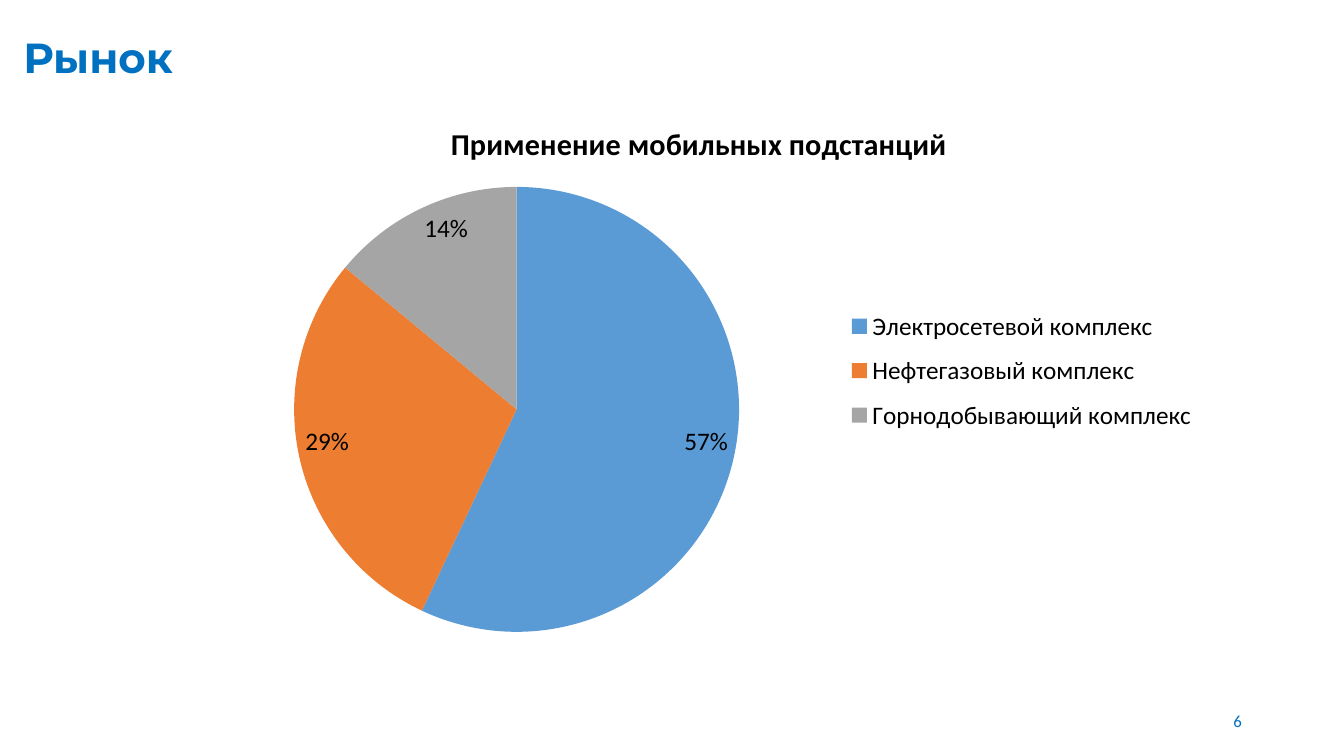
from lxml import etree
from pptx import Presentation
from pptx.chart.data import CategoryChartData
from pptx.dml.color import RGBColor
from pptx.enum.chart import XL_CHART_TYPE, XL_LABEL_POSITION, XL_LEGEND_POSITION
from pptx.enum.text import MSO_ANCHOR, PP_ALIGN
from pptx.oxml.ns import qn
from pptx.util import Pt

PIE = XL_CHART_TYPE.PIE
INSIDE_END = XL_LABEL_POSITION.INSIDE_END
LEGEND_RIGHT = XL_LEGEND_POSITION.RIGHT
MIDDLE = MSO_ANCHOR.MIDDLE
LEFT = PP_ALIGN.LEFT
RIGHT = PP_ALIGN.RIGHT

BLUE = RGBColor(0x00, 0x70, 0xC0)
BLACK = RGBColor(0x00, 0x00, 0x00)
SECTORS = [
    ("Электросетевой комплекс", 57, RGBColor(0x5B, 0x9B, 0xD5)),
    ("Нефтегазовый комплекс", 29, RGBColor(0xED, 0x7D, 0x31)),
    ("Горнодобывающий комплекс", 14, RGBColor(0xA5, 0xA5, 0xA5)),
]


def write_text(frame, text, size, color, font="Calibri", bold=False, align=None):
    frame.text = text
    paragraph = frame.paragraphs[0]
    if align is not None:
        paragraph.alignment = align
    run_font = paragraph.runs[0].font
    run_font.name = font
    run_font.size = Pt(size)
    run_font.bold = bold
    run_font.color.rgb = color


def place_part(part, x, y, w, h, inner=False):
    layout = part.find(qn("c:layout"))
    if layout is None:
        layout = etree.Element(qn("c:layout"))
        if inner:
            part.insert(0, layout)
        else:
            part.find(qn("c:legendPos")).addnext(layout)
    manual = etree.SubElement(layout, qn("c:manualLayout"))
    settings = [("layoutTarget", "inner")] if inner else []
    settings += [("xMode", "edge"), ("yMode", "edge"),
                 ("x", x), ("y", y), ("w", w), ("h", h)]
    for tag, value in settings:
        etree.SubElement(manual, qn(f"c:{tag}")).set("val", str(value))


def add_heading(slide, left, top, width, height):
    heading = slide.shapes.title
    heading.left, heading.top = Pt(left), Pt(top)
    heading.width, heading.height = Pt(width), Pt(height)
    heading.text_frame.vertical_anchor = MIDDLE
    write_text(heading.text_frame, "Рынок", 30, BLUE,
               font="Montserrat", bold=True, align=LEFT)


def add_market_pie(slide, left, top, width, height):
    market = CategoryChartData()
    market.categories = [name for name, share, color in SECTORS]
    market.add_series("Series 1", [share for name, share, color in SECTORS])
    chart = slide.shapes.add_chart(
        PIE, Pt(left), Pt(top), Pt(width), Pt(height), market).chart
    chart.font.name = "Calibri"
    chart.font.size = Pt(18)
    chart.font.color.rgb = BLACK
    chart.has_title = True
    write_text(chart.chart_title.text_frame, "Применение мобильных подстанций",
               21.6, BLACK, bold=True)
    chart.chart_title.include_in_layout = False

    plot = chart.plots[0]
    plot.vary_by_categories = True
    for index, (name, share, color) in enumerate(SECTORS):
        fill = plot.series[0].points[index].format.fill
        fill.solid()
        fill.fore_color.rgb = color
    plot.has_data_labels = True
    labels = plot.data_labels
    labels.show_value = False
    labels.show_percentage = True
    labels.number_format = "0%"
    labels.number_format_is_linked = False
    labels.position = INSIDE_END

    chart.has_legend = True
    legend = chart.legend
    legend.position = LEGEND_RIGHT
    legend.include_in_layout = False
    chart_xml = chart.element
    place_part(chart_xml.find(".//" + qn("c:plotArea")),
               0.117, 0.158, 0.421, 0.816, inner=True)
    place_part(chart_xml.find(".//" + qn("c:legend")), 0.63, 0.36, 0.35, 0.27)


def add_page_number(slide, left, top, width, height):
    page_number = slide.shapes.add_textbox(
        Pt(left), Pt(top), Pt(width), Pt(height)).text_frame
    page_number.word_wrap = True
    page_number.vertical_anchor = MIDDLE
    write_text(page_number, "6", 12, BLUE, align=RIGHT)


def main():
    deck = Presentation()
    deck.slide_width, deck.slide_height = Pt(960), Pt(540)
    slide = deck.slides.add_slide(deck.slide_layouts[5])
    add_heading(slide, 9.4, 9.4, 348.5, 62.6)
    add_market_pie(slide, 121.7, 72, 755.3, 389.5)
    add_page_number(slide, 678.2, 500.4, 216, 28.8)
    deck.save("out.pptx")


if __name__ == "__main__":
    main()
